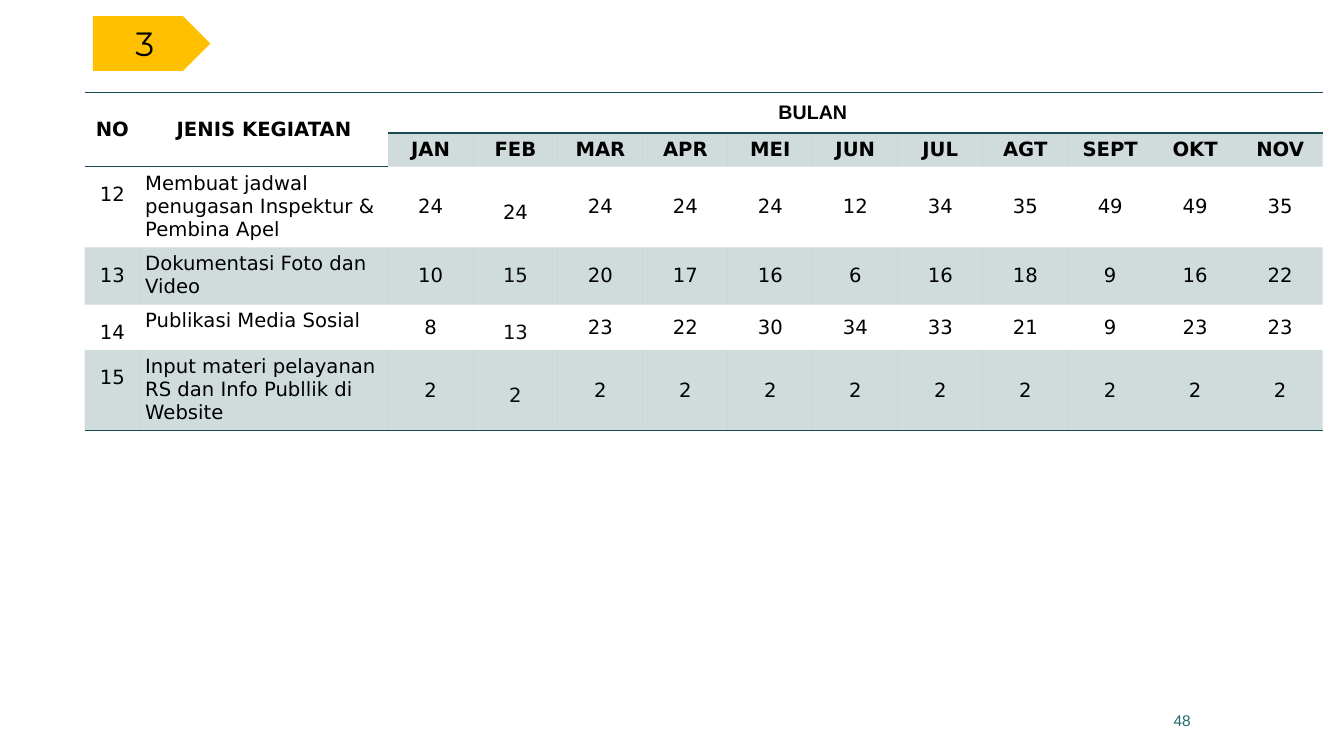
"""Build the monthly activity slide."""
from dataclasses import dataclass
from typing import NamedTuple

from lxml.etree import SubElement
from pptx import Presentation
from pptx.dml.color import RGBColor
from pptx.enum.shapes import MSO_SHAPE
from pptx.enum.text import MSO_ANCHOR, PP_ALIGN
from pptx.oxml import parse_xml
from pptx.oxml.ns import nsdecls, qn
from pptx.slide import Slide
from pptx.table import Table, _Cell
from pptx.text.text import TextFrame
from pptx.util import Pt


@dataclass(frozen=True)
class Theme:
    ink: str = "000000"
    soft: str = "0C0C0C"
    teal: str = "164B4F"
    page: str = "1F696F"
    gold: str = "FFC000"
    alpha: int = 20
    body: str = "DejaVu Sans"
    plain: str = "Arial"
    show: str = "Montserrat"
    small: float = 11
    text: float = 14
    large: float = 24


class Style(NamedTuple):
    font: str
    size: float
    color: str
    bold: bool = False
    align: PP_ALIGN = PP_ALIGN.CENTER
    space: float = 1.0
    anchor: MSO_ANCHOR = MSO_ANCHOR.MIDDLE


class Task(NamedTuple):
    no: str
    name: str
    counts: tuple[int, ...]
    height: float


THEME = Theme()
HEAD = Style(THEME.body, THEME.text, THEME.ink, bold=True)
SPAN = HEAD._replace(font=THEME.plain)
BODY = HEAD._replace(bold=False)
NUMBER = BODY._replace(space=1.5, anchor=MSO_ANCHOR.TOP)
NAME = BODY._replace(align=PP_ALIGN.LEFT, anchor=MSO_ANCHOR.TOP)
TALL = BODY._replace(space=1.5)
SOFT = TALL._replace(color=THEME.soft)

MONTHS = ("JAN", "FEB", "MAR", "APR", "MEI", "JUN",
          "JUL", "AGT", "SEPT", "OKT", "NOV")
TASKS = (
    Task("12", "Membuat jadwal penugasan Inspektur & Pembina Apel",
         (24, 24, 24, 24, 24, 12, 34, 35, 49, 49, 35), 56.9),
    Task("13", "Dokumentasi Foto dan Video",
         (10, 15, 20, 17, 16, 6, 16, 18, 9, 16, 22), 40.2),
    Task("14", "Publikasi Media Sosial",
         (8, 13, 23, 22, 30, 34, 33, 21, 9, 23, 23), 31.7),
    Task("15", "Input materi pelayanan RS dan Info Publlik di Website",
         (2,) * 11, 56.6),
)
FEB_STYLES = (TALL, SOFT._replace(anchor=MSO_ANCHOR.TOP), SOFT, SOFT)
WIDTHS = (39.6, 177.1) + (60.7,) * len(MONTHS)
HEIGHTS = (23.7, 23.7) + tuple(task.height for task in TASKS)
NO_STYLE = "{2D5ABB26-0587-4C30-8999-92F81FD0307C}"


def write(frame: TextFrame, text: str, style: Style) -> None:
    """Write one styled run into a text frame."""
    frame.word_wrap = True
    para = frame.paragraphs[0]
    para.alignment = style.align
    para.line_spacing = style.space
    run = para.add_run()
    run.text = text
    run.font.name = style.font
    run.font.size = Pt(style.size)
    run.font.bold = style.bold
    run.font.color.rgb = RGBColor.from_string(style.color)


def fill_cell(cell: _Cell, text: str, style: Style) -> None:
    """Write text in a cell and anchor it."""
    write(cell.text_frame, text, style)
    cell.vertical_anchor = style.anchor


def shade(cell: _Cell) -> None:
    """Give a cell the pale teal tint."""
    cell.fill.solid()
    cell.fill.fore_color.rgb = RGBColor.from_string(THEME.teal)
    for tint in cell._tc.tcPr.iter(qn("a:srgbClr")):
        SubElement(tint, qn("a:alpha"), val=str(THEME.alpha * 1000))


def rule(cell: _Cell, sides: str) -> None:
    """Draw teal lines on the given sides of a cell."""
    for place, side in enumerate(sides):
        line = parse_xml(
            f'<a:ln{side} {nsdecls("a")} w="{Pt(1)}"><a:solidFill>'
            f'<a:srgbClr val="{THEME.teal}"/></a:solidFill></a:ln{side}>')
        cell._tc.get_or_add_tcPr().insert(place, line)


def format_grid(table: Table) -> None:
    """Set sizes, insets, tints and lines of the table."""
    table.first_row = table.horz_banding = False
    table._tbl.tblPr.find(qn("a:tableStyleId")).text = NO_STYLE
    for col, width in zip(table.columns, WIDTHS):
        col.width = Pt(width)
    for row, height in zip(table.rows, HEIGHTS):
        row.height = Pt(height)
    last = len(HEIGHTS) - 1
    for r in range(len(HEIGHTS)):
        for c in range(len(WIDTHS)):
            cell = table.cell(r, c)
            cell.margin_left = cell.margin_right = Pt(3.6)
            cell.margin_top = cell.margin_bottom = Pt(3.6)
            if r in (3, last) or (r == 1 and c > 1):
                shade(cell)
            else:
                cell.fill.background()
            if r == 0:
                rule(cell, "TB")
            elif r == last or (r == 1 and c < 2):
                rule(cell, "B")


def add_grid(slide: Slide) -> None:
    """Add the table of tasks by month."""
    table = slide.shapes.add_table(
        len(HEIGHTS), len(WIDTHS), Pt(60.5), Pt(66.2),
        Pt(sum(WIDTHS)), Pt(sum(HEIGHTS))).table
    format_grid(table)
    for c, title in enumerate(("NO", "JENIS KEGIATAN")):
        table.cell(0, c).merge(table.cell(1, c))
        fill_cell(table.cell(0, c), title, HEAD)
    table.cell(0, 2).merge(table.cell(0, 11))
    fill_cell(table.cell(0, 2), "BULAN", SPAN)
    for c, month in enumerate(MONTHS, 2):
        fill_cell(table.cell(1, c), month, HEAD)
    for r, (task, feb) in enumerate(zip(TASKS, FEB_STYLES), 2):
        fill_cell(table.cell(r, 0), task.no, NUMBER)
        fill_cell(table.cell(r, 1), task.name, NAME)
        for c, count in enumerate(task.counts, 2):
            fill_cell(table.cell(r, c), str(count), feb if c == 3 else BODY)


def add_badge(slide: Slide) -> None:
    """Add the gold arrow with the section number."""
    badge = slide.shapes.add_shape(
        MSO_SHAPE.PENTAGON, Pt(66.3), Pt(11.6), Pt(84), Pt(39))
    badge.shadow.inherit = False
    badge.fill.solid()
    badge.fill.fore_color.rgb = RGBColor.from_string(THEME.gold)
    badge.line.fill.background()
    badge.text_frame.vertical_anchor = MSO_ANCHOR.MIDDLE
    write(badge.text_frame, "3", Style(THEME.show, THEME.large, THEME.ink))


def add_page(slide: Slide) -> None:
    """Add the page number."""
    frame = slide.shapes.add_textbox(
        Pt(633.6), Pt(500.4), Pt(224), Pt(28.8)).text_frame
    frame.vertical_anchor = MSO_ANCHOR.MIDDLE
    write(frame, "48", Style(THEME.plain, THEME.small, THEME.page,
                             align=PP_ALIGN.RIGHT))


def main() -> None:
    """Build and save the deck."""
    deck = Presentation()
    deck.slide_width, deck.slide_height = Pt(960), Pt(540)
    slide = deck.slides.add_slide(deck.slide_layouts[6])
    add_page(slide)
    add_grid(slide)
    add_badge(slide)
    deck.save("out.pptx")


if __name__ == "__main__":
    main()
